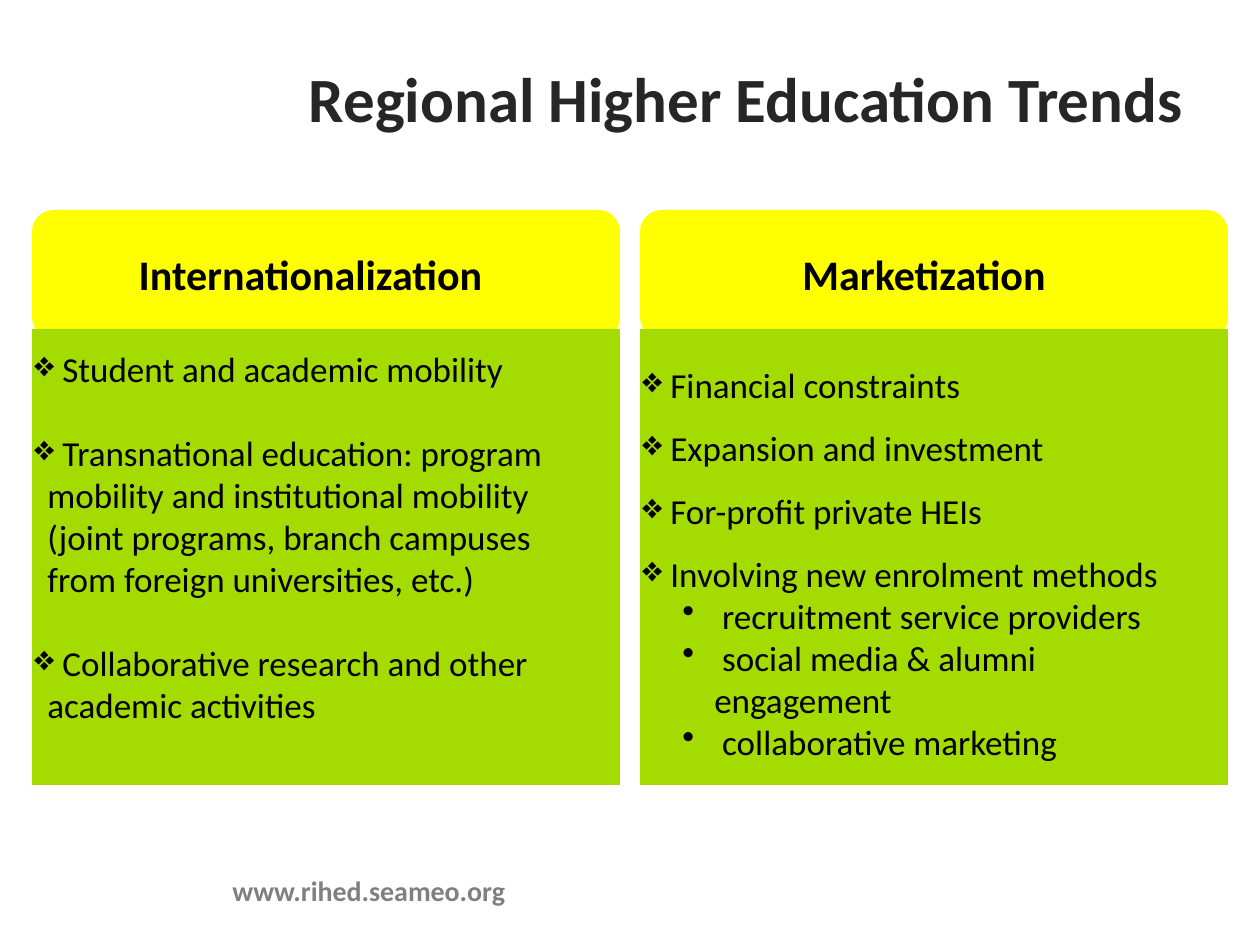
from lxml import etree
from pptx import Presentation
from pptx.dml.color import RGBColor
from pptx.enum.shapes import MSO_SHAPE
from pptx.enum.text import MSO_ANCHOR, PP_ALIGN
from pptx.oxml.ns import qn
from pptx.util import Emu, Pt

RECT, ROUND = MSO_SHAPE.RECTANGLE, MSO_SHAPE.ROUNDED_RECTANGLE
TOP, CENTER, LEFT = MSO_ANCHOR.TOP, PP_ALIGN.CENTER, PP_ALIGN.LEFT
TITLE_ONLY = 5
PX = 914400 / 126


def px(n):
    return Emu(round(n * PX))


def color(hex_string):
    return RGBColor.from_string(hex_string)


def write(p, text, font="Calibri", size=20, fill="000000", bold=False,
          align=LEFT, after=0, bullet=None, margin=0, hang=0):
    """Fill one paragraph with formatted text."""
    if bullet:
        pPr = p._p.get_or_add_pPr()
        pPr.set("marL", str(px(margin)))
        pPr.set("indent", str(-px(hang)))
        etree.SubElement(pPr, qn("a:buChar")).set("char", bullet)
    p.alignment = align
    p.space_before, p.space_after = Pt(0), Pt(after)
    r = p.add_run()
    r.text = text
    r.font.name, r.font.size, r.font.bold = font, Pt(size), bold
    r.font.color.rgb = color(fill)


class Deck:
    yellow, green, dark, gray = "FFFF00", "A4DB00", "262626", "808080"
    main = dict(bullet="❖", margin=13, hang=13)
    sub = dict(bullet="•", margin=72, hang=32)

    def __init__(self):
        self.prs = Presentation()
        self.prs.slide_width, self.prs.slide_height = px(1260), px(945)
        self.s = self.prs.slides.add_slide(self.prs.slide_layouts[TITLE_ONLY])

    def title(self, text, x, y, w, h):
        sp = self.s.shapes.title
        sp.left, sp.top, sp.width, sp.height = map(px, (x, y, w, h))
        tf = sp.text_frame
        tf.vertical_anchor = TOP
        write(tf.paragraphs[0], text, size=36, bold=True, fill=self.dark, align=CENTER)

    def panel(self, kind, x, y, w, h, fill):
        sp = self.s.shapes.add_shape(kind, *map(px, (x, y, w, h)))
        sp.shadow.inherit = False
        sp.fill.solid()
        sp.fill.fore_color.rgb = color(fill)
        sp.line.fill.background()

    def text(self, paragraphs, x, y, w, h):
        tf = self.s.shapes.add_textbox(*map(px, (x, y, w, h))).text_frame
        tf.word_wrap = True
        for i, (text, style) in enumerate(paragraphs):
            p = tf.add_paragraph() if i else tf.paragraphs[0]
            write(p, text, **style)

    def column(self, x, heading, items, body_y, body_w, body_h):
        self.panel(ROUND, x, 210, 588, 129, self.yellow)
        self.panel(RECT, x, 329, 588, 456, self.green)
        head = dict(size=24, bold=True, align=CENTER)
        self.text([(heading, head)], x - 10, 242, 577 if x < 600 else 588, 63)
        self.text(items, x - 10, body_y, body_w, body_h)


def main():
    deck = Deck()
    main_gap = dict(deck.main, after=24)
    small_gap = dict(deck.main, after=12)

    # Title and footer
    deck.title("Regional Higher Education Trends", 284, 53, 924, 116)
    footer = dict(size=16, bold=True, fill=deck.gray)
    deck.text([("www.rihed.seameo.org", footer)], 220, 867, 336, 47)

    # Left column
    deck.column(32, "Internationalization", [
        (" Student and academic mobility", main_gap),
        (" Transnational education: program mobility and institutional mobility "
         "(joint programs, branch campuses from foreign universities, etc.)", main_gap),
        (" Collaborative research and other academic activities", deck.main),
    ], 341, 577, 432)

    # Right column
    deck.column(640, "Marketization", [
        (" Financial constraints", small_gap),
        (" Expansion and investment", small_gap),
        (" For-profit private HEIs", small_gap),
        (" Involving new enrolment methods", deck.main),
        (" recruitment service providers", deck.sub),
        (" social media & alumni engagement", deck.sub),
        (" collaborative marketing", deck.sub),
    ], 357, 568, 454)

    deck.prs.save("out.pptx")


if __name__ == "__main__":
    main()
